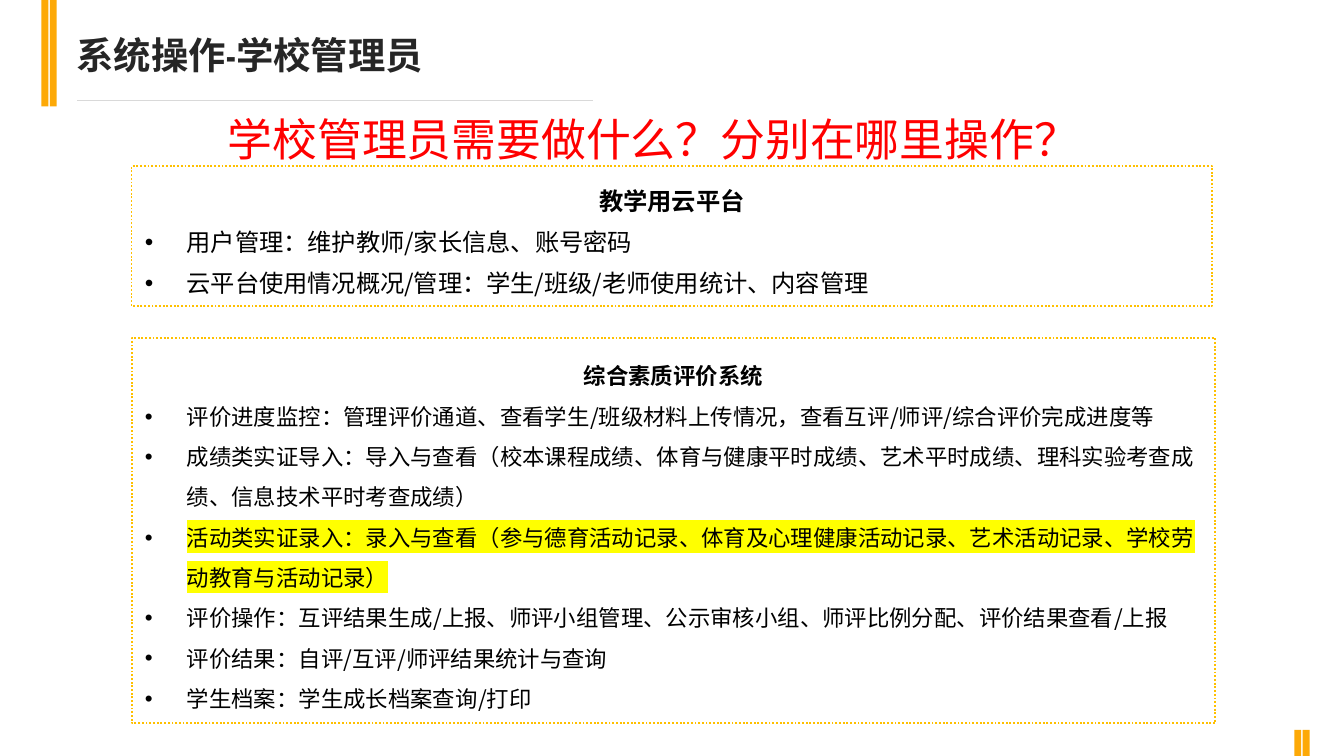
import pptx
import pptx.dml.color
import pptx.enum.dml
import pptx.enum.lang
import pptx.enum.shapes
import pptx.enum.text
import pptx.oxml
import pptx.oxml.ns
import pptx.util

Pt = pptx.util.Pt
RGBColor = pptx.dml.color.RGBColor
Align = pptx.enum.text.PP_ALIGN
Anchor = pptx.enum.text.MSO_ANCHOR
qn = pptx.oxml.ns.qn

ORANGE = RGBColor(0xFD, 0xA9, 0x07)
GOLD = RGBColor(0xFF, 0xC0, 0x00)
GREY = RGBColor(0xD9, 0xD9, 0xD9)
DARK = RGBColor(0x26, 0x26, 0x26)
RED = RGBColor(0xFF, 0x00, 0x00)
BLACK = RGBColor(0x00, 0x00, 0x00)
YELLOW = RGBColor(0xFF, 0xFF, 0x00)
CJK = "Noto Sans CJK SC"
INDENT = 22.5


class SlideBuilder:
    def __init__(self, slide):
        self.slide = slide

    def element(self, parent, tag, **attributes):
        child = parent.makeelement(qn(tag), attributes)
        parent.append(child)
        return child

    def rect(self, left, top, width, height):
        shape = self.slide.shapes.add_shape(
            pptx.enum.shapes.MSO_SHAPE.RECTANGLE,
            Pt(left), Pt(top), Pt(width), Pt(height))
        shape.shadow.inherit = False
        return shape

    def bar(self, left, top, width, height):
        bar = self.rect(left, top, width, height)
        bar.fill.solid()
        bar.fill.fore_color.rgb = ORANGE
        bar.line.fill.background()

    def rule(self, left, right, y):
        rule = self.slide.shapes.add_connector(
            pptx.enum.shapes.MSO_CONNECTOR.STRAIGHT,
            Pt(left), Pt(y), Pt(right), Pt(y))
        rule.line.color.rgb = GREY
        rule.line.width = Pt(0.75)
        self.element(rule._element.spPr, "a:effectLst")

    def run(self, paragraph, text, size, color, latin=CJK, bold=False, highlight=None):
        run = paragraph.add_run()
        run.text = text
        font = run.font
        font.size = Pt(size)
        font.bold = bold
        font.color.rgb = color
        font.language_id = pptx.enum.lang.MSO_LANGUAGE_ID.SIMPLIFIED_CHINESE
        properties = run._r.get_or_add_rPr()
        if highlight is not None:
            marker = self.element(properties, "a:highlight")
            self.element(marker, "a:srgbClr", val=str(highlight))
        self.element(properties, "a:latin", typeface=latin)
        self.element(properties, "a:ea", typeface=CJK)

    def text(self, left, top, width, height, text, size, color, latin,
             bold=False, align=Align.LEFT, spacing=1.0, inset=None):
        box = self.slide.shapes.add_textbox(Pt(left), Pt(top), Pt(width), Pt(height))
        frame = box.text_frame
        frame.word_wrap = True
        if inset is not None:
            frame.margin_left = frame.margin_right = Pt(inset)
            frame.margin_top = frame.margin_bottom = Pt(inset)
        paragraph = frame.paragraphs[0]
        paragraph.alignment = align
        paragraph.line_spacing = spacing
        self.run(paragraph, text, size, color, latin, bold)

    def panel(self, left, top, width, height, heading, items, size, spacing, marked=()):
        panel = self.rect(left, top, width, height)
        panel.fill.background()
        panel.line.color.rgb = GOLD
        panel.line.width = Pt(1)
        panel.line.dash_style = pptx.enum.dml.MSO_LINE.ROUND_DOT
        frame = panel.text_frame
        frame.word_wrap = True
        frame.vertical_anchor = Anchor.MIDDLE
        title = frame.paragraphs[0]
        title.alignment = Align.CENTER
        title.line_spacing = spacing
        self.run(title, heading, size, BLACK, bold=True)
        for item in items:
            paragraph = frame.add_paragraph()
            paragraph.alignment = Align.LEFT
            paragraph.line_spacing = spacing
            properties = paragraph._p.get_or_add_pPr()
            properties.set("marL", str(Pt(INDENT)))
            properties.set("indent", str(-Pt(INDENT)))
            self.element(properties, "a:buFont", typeface="Arial")
            self.element(properties, "a:buChar", char="•")
            self.run(paragraph, item, size, BLACK,
                     highlight=YELLOW if item in marked else None)


PLATFORM_TASKS = [
    "用户管理：维护教师/家长信息、账号密码",
    "云平台使用情况概况/管理：学生/班级/老师使用统计、内容管理",
]
ACTIVITY_ENTRY = "活动类实证录入：录入与查看（参与德育活动记录、体育及心理健康活动记录、艺术活动记录、学校劳动教育与活动记录）"
EVALUATION_TASKS = [
    "评价进度监控：管理评价通道、查看学生/班级材料上传情况，查看互评/师评/综合评价完成进度等",
    "成绩类实证导入：导入与查看（校本课程成绩、体育与健康平时成绩、艺术平时成绩、理科实验考查成绩、信息技术平时考查成绩）",
    ACTIVITY_ENTRY,
    "评价操作：互评结果生成/上报、师评小组管理、公示审核小组、师评比例分配、评价结果查看/上报",
    "评价结果：自评/互评/师评结果统计与查询",
    "学生档案：学生成长档案查询/打印",
]


def main():
    deck = pptx.Presentation()
    deck.slide_width = Pt(720)
    deck.slide_height = Pt(405)
    builder = SlideBuilder(deck.slides.add_slide(deck.slide_layouts[6]))

    for left, top, height in ((22.2, 0, 57), (693.4, 391, 14)):
        for step in range(2):
            builder.bar(left + step * 4.5, top, 3.7, height)
    builder.rule(41.3, 317.5, 53.7)
    builder.text(33.8, 13.7, 304.5, 31.5, "系统操作-学校管理员", 20, DARK,
                 "Arial Narrow", bold=True)
    builder.text(83.5, 57, 533, 70, "学校管理员需要做什么？分别在哪里操作？", 24, RED,
                 "Arial", align=Align.CENTER, spacing=1.1, inset=0)
    builder.panel(70.5, 89, 579, 75, "教学用云平台", PLATFORM_TASKS, 13, 1.4)
    builder.panel(70.5, 181, 580.5, 206.5, "综合素质评价系统", EVALUATION_TASKS, 12, 1.5,
                  marked=(ACTIVITY_ENTRY,))
    deck.save("out.pptx")


if __name__ == "__main__":
    main()
